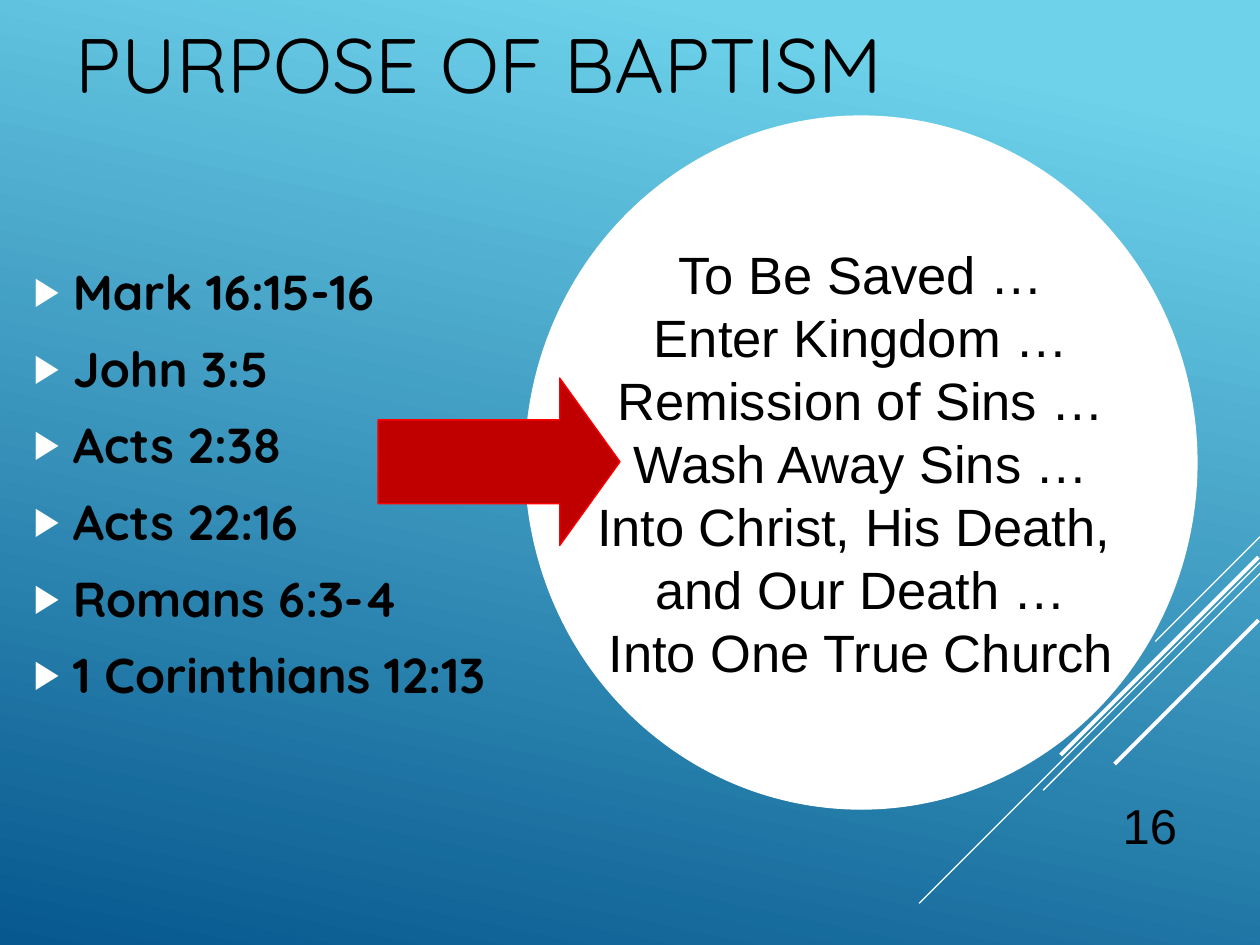
import pptx
import pptx.dml.color
import pptx.enum.shapes
import pptx.enum.text
import pptx.oxml
import pptx.oxml.ns
import pptx.util
from dataclasses import dataclass

Cm = pptx.util.Cm
Pt = pptx.util.Pt
SHAPE = pptx.enum.shapes.MSO_SHAPE
ALIGN = pptx.enum.text.PP_ALIGN
ANCHOR = pptx.enum.text.MSO_ANCHOR


def rgb(value):
    return pptx.dml.color.RGBColor.from_string(value)


@dataclass(frozen=True)
class Theme:
    sky: str = "6ED2EB"
    deep: str = "06588E"
    ink: str = "000000"
    white: str = "FFFFFF"
    arrow: str = "C00000"
    arrow_edge: str = "FF0000"
    display: str = "Quicksand"
    plain: str = "Arial"
    title_size: float = 44
    purpose_size: float = 30
    body_size: float = 28
    thin: float = 0.75
    thick: float = 2.25


class SlideBuilder:
    def __init__(self, s, theme):
        self.s = s
        self.theme = theme

    def background(self):
        fill = self.s.background.fill
        fill.gradient()
        fill.gradient_angle = 258
        stops = ((0.1, self.theme.sky), (1, self.theme.deep))
        for stop, (position, color) in zip(fill.gradient_stops, stops):
            stop.position = position
            stop.color.rgb = rgb(color)

    def line(self, x1, y1, x2, y2, width):
        c = self.s.shapes.add_connector(
            pptx.enum.shapes.MSO_CONNECTOR.STRAIGHT, Cm(x1), Cm(y1), Cm(x2), Cm(y2))
        c.line.color.rgb = rgb(self.theme.white)
        c.line.width = Pt(width)
        sp_pr = c._element.spPr
        sp_pr.append(pptx.oxml.parse_xml(
            "<a:effectLst %s/>" % pptx.oxml.ns.nsdecls("a")))

    def set_text(self, sp, lines, font, size, bold=False, align=ALIGN.LEFT,
                 anchor=ANCHOR.MIDDLE, wrap=True):
        tf = sp.text_frame
        tf.text = "\n".join(lines)
        tf.word_wrap = wrap
        tf.vertical_anchor = anchor
        for p in tf.paragraphs:
            p.alignment = align
            for r in p.runs:
                r.font.name = font
                r.font.size = Pt(size)
                r.font.bold = bold
                r.font.color.rgb = rgb(self.theme.ink)

    def text(self, x, y, w, h, lines, font, size, **style):
        sp = self.s.shapes.add_textbox(Cm(x), Cm(y), Cm(w), Cm(h))
        self.set_text(sp, lines, font, size, **style)
        return sp

    def bullets(self, x, y, w, h, items):
        sp = self.text(x, y, w, h, items, self.theme.display,
                       self.theme.body_size, bold=True)
        marks = (
            '<a:buClr %s><a:srgbClr val="{}"/></a:buClr>'.format(self.theme.white),
            '<a:buSzPct %s val="80000"/>',
            '<a:buFont %s typeface="Arial"/>',
            '<a:buChar %s char="▶"/>',
        )
        for p in sp.text_frame.paragraphs:
            p.space_before = Pt(4.2)
            p.space_after = Pt(6)
            p_pr = p._p.get_or_add_pPr()
            p_pr.set("marL", str(Cm(0.79)))
            p_pr.set("indent", str(-Cm(0.79)))
            for mark in marks:
                p_pr.append(pptx.oxml.parse_xml(mark % pptx.oxml.ns.nsdecls("a")))

    def shape(self, kind, x, y, w, h, fill, edge):
        sp = self.s.shapes.add_shape(kind, Cm(x), Cm(y), Cm(w), Cm(h))
        sp.shadow.inherit = False
        sp.fill.solid()
        sp.fill.fore_color.rgb = rgb(fill)
        sp.line.color.rgb = rgb(edge)
        sp.line.width = Pt(self.theme.thin)
        return sp


def main():
    prs = pptx.Presentation()
    prs.slide_width, prs.slide_height = Cm(25.4), Cm(19.05)
    t = Theme()
    b = SlideBuilder(prs.slides.add_slide(prs.slide_layouts[6]), t)
    b.background()

    # Diagonal rays: right end, then the equal run left and down
    for x, y, run, width in (
        (25.4, 10.82, 2.11, t.thin),
        (25.4, 11.34, 6.87, t.thin),
        (25.4, 11.56, 4.37, t.thin),
        (25.37, 11.23, 3.99, t.thick),
        (25.37, 12.5, 2.9, t.thick),
    ):
        b.line(x, y, x - run, y + run, width)

    b.text(1.27, 0.2, 22.86, 2.13, ["PURPOSE OF BAPTISM"], t.display, t.title_size)
    b.bullets(0.43, 4.22, 10.44, 11.02, [
        "Mark 16:15-16", "John 3:5", "Acts 2:38",
        "Acts 22:16", "Romans 6:3-4", "1 Corinthians 12:13",
    ])
    b.text(21.59, 15.49, 2.39, 1.85, ["16"], t.plain, t.body_size,
           align=ALIGN.RIGHT, anchor=ANCHOR.BOTTOM)

    circle = b.shape(SHAPE.OVAL, 10.59, 2.34, 13.54, 13.97, t.white, t.white)
    b.set_text(circle, [
        "To Be Saved …", "Enter Kingdom …", "Remission of Sins …",
        "Wash Away Sins …", "Into Christ, His Death, ", "and Our Death …",
        "Into One True Church",
    ], t.plain, t.purpose_size, align=ALIGN.CENTER, wrap=False)

    arrow = b.shape(SHAPE.RIGHT_ARROW, 7.62, 7.62, 4.88, 3.38, t.arrow, t.arrow_edge)
    arrow.adjustments[0] = 0.5
    arrow.adjustments[1] = 0.36

    prs.save("out.pptx")


if __name__ == "__main__":
    main()
